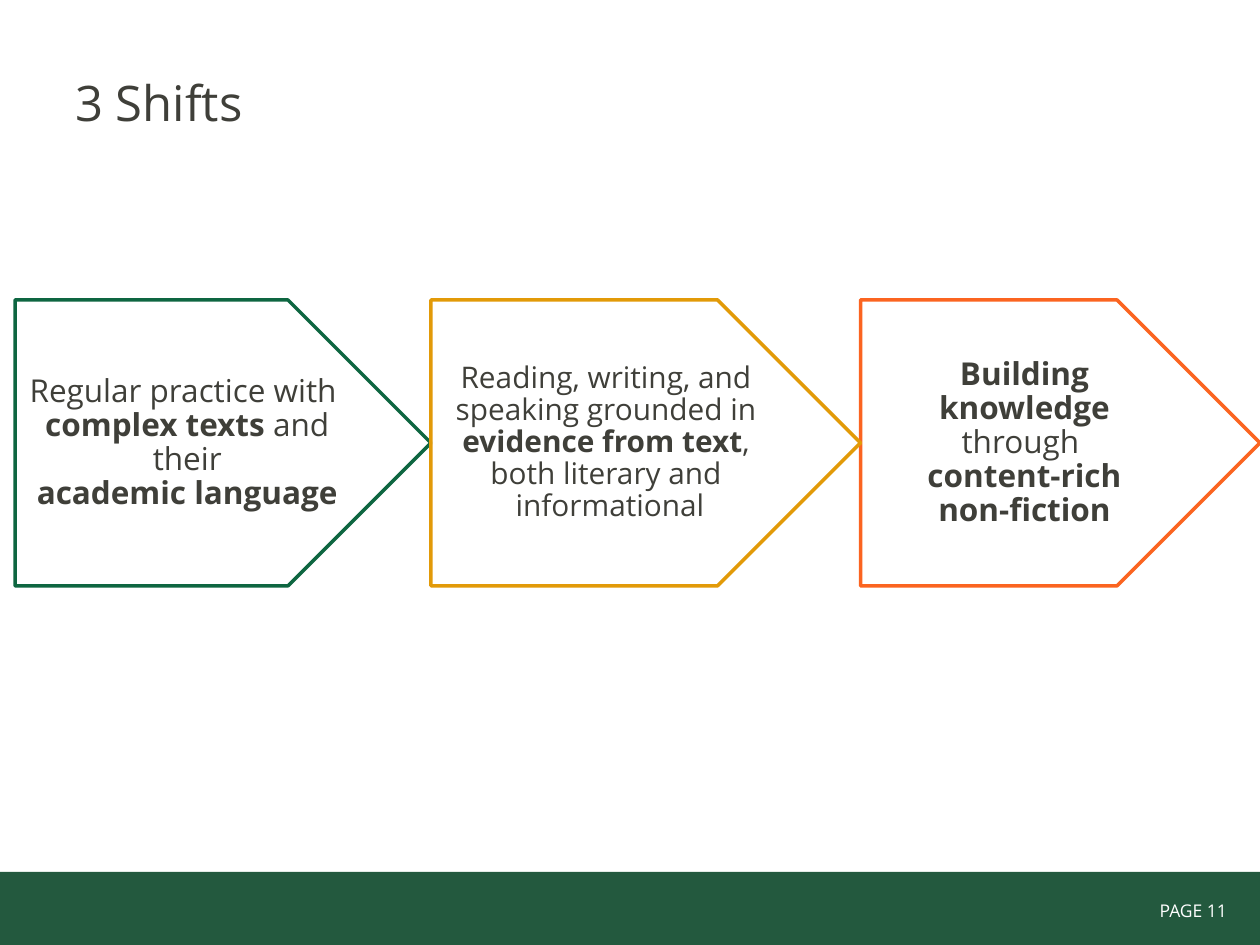
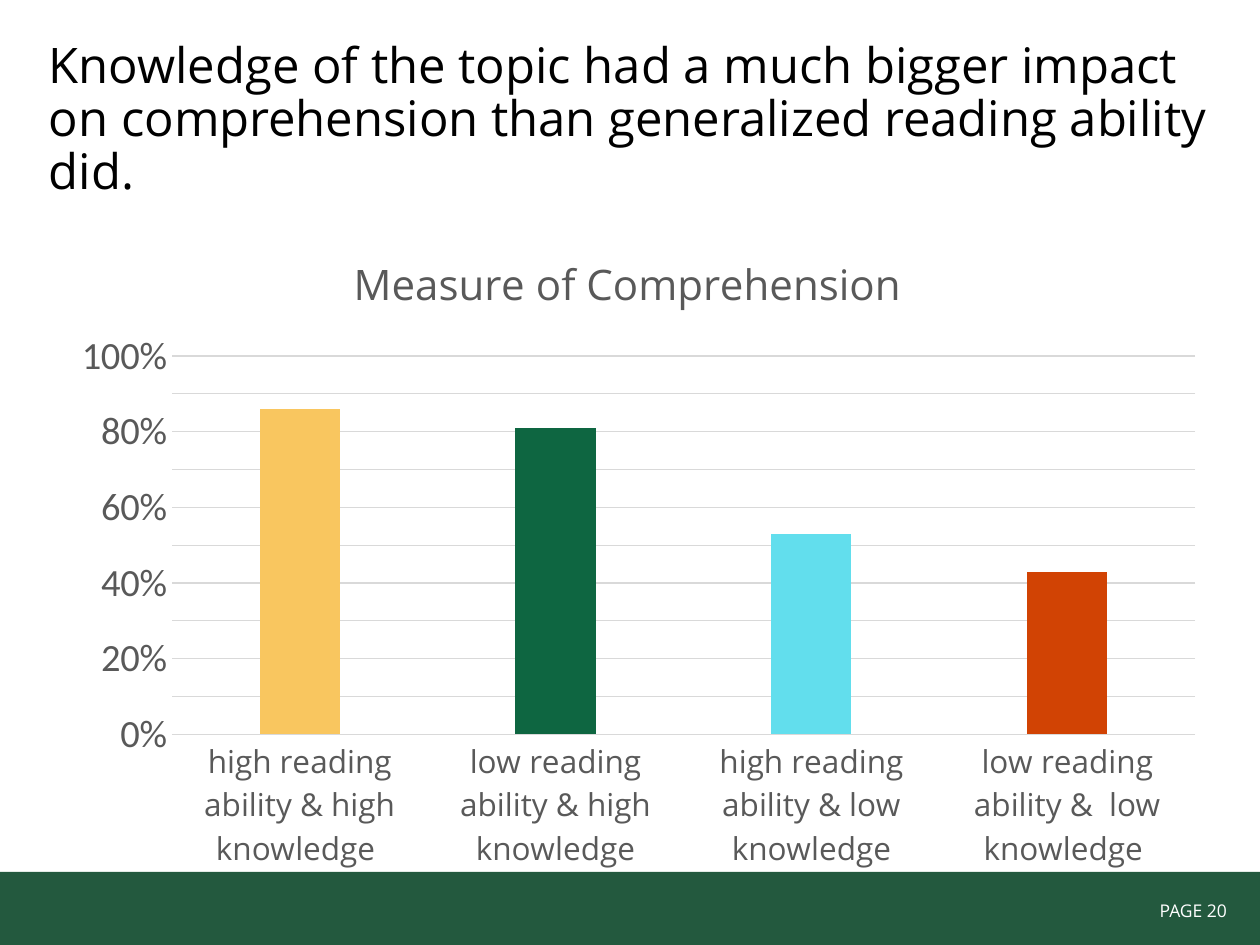
from lxml import etree
from pptx import Presentation
from pptx.chart.data import CategoryChartData
from pptx.dml.color import RGBColor
from pptx.enum.chart import XL_CHART_TYPE as ChartType, XL_TICK_MARK as TickMark
from pptx.enum.shapes import MSO_SHAPE as Shape
from pptx.enum.text import MSO_ANCHOR as Anchor, PP_ALIGN as Align
from pptx.oxml.ns import qn
from pptx.util import Pt

FONT = "Open Sans"
BAND, WHITE, BLACK = "23593E", "FFFFFF", "000000"
INK, GREY, GRID = "3F3F39", "595959", "D9D9D9"
GREEN, GOLD, ORANGE = "0E6641", "E29A08", "FB6420"
TITLE_SIZE = 28
TIGHT = 0.9

# left, width, colour, text size, paragraphs of (text, bold) spans
SHIFTS = [
    (8.64, 237.6, GREEN, 18, [
        [("Regular practice with ", False)],
        [("complex texts ", True), ("and their", False)],
        [("academic language", True)],
    ]),
    (491.76, 228.24, ORANGE, 18, [
        [("Building knowledge", True)],
        [("through ", False)],
        [("content-rich", True)],
        [("non-fiction", True)],
    ]),
    (246.24, 245.52, GOLD, 17, [
        [("Reading, writing, and ", False)],
        [("speaking grounded in ", False)],
        [("evidence from text", True), (", ", False)],
        [("both literary and ", False)],
        [("informational", False)],
    ]),
]

# category, share, bar colour
COMPREHENSION = [
    ("high reading ability & high knowledge ", 0.86, "F9C65F"),
    ("low reading ability & high knowledge", 0.81, GREEN),
    ("high reading ability & low knowledge", 0.53, "62DEED"),
    ("low reading ability &  low knowledge ", 0.43, "D14304"),
]


def rgb(value):
    return RGBColor.from_string(value)


def style_font(font, size, color, name=FONT, bold=False):
    font.name, font.size, font.bold = name, Pt(size), bold
    font.color.rgb = rgb(color)


def fill_text(frame, paragraphs, size, color, align=Align.LEFT,
              anchor=Anchor.TOP, spacing=None):
    """Write paragraphs, each a list of (text, bold) spans, into a frame."""
    frame.word_wrap = True
    frame.vertical_anchor = anchor
    for index, spans in enumerate(paragraphs):
        para = frame.add_paragraph() if index else frame.paragraphs[0]
        para.alignment = align
        if spacing:
            para.line_spacing = spacing
        for text, bold in spans:
            span = para.add_run()
            span.text = text
            style_font(span.font, size, color, bold=bold)


def add_text(page, box, text, size, color, **layout):
    frame = page.shapes.add_textbox(*map(Pt, box)).text_frame
    fill_text(frame, [[(text, False)]], size, color, **layout)


def add_title(page, box, text, color):
    add_text(page, box, text, TITLE_SIZE, color, anchor=Anchor.MIDDLE,
             spacing=TIGHT)


def add_page(deck, number):
    """Add a blank page with the footer band and its page number."""
    page = deck.slides.add_slide(deck.slide_layouts[6])
    band = page.shapes.add_shape(Shape.RECTANGLE, Pt(0), Pt(498.2), Pt(720.5), Pt(42.5))
    band.shadow.inherit = False
    band.fill.solid()
    band.fill.fore_color.rgb = rgb(BAND)
    band.line.fill.background()
    add_text(page, (596.2, 510.5, 114.5, 19.4), f"PAGE {number} ", 10, WHITE,
             align=Align.RIGHT)
    return page


def add_shift(page, box, color, size, paragraphs):
    arrow = page.shapes.add_shape(Shape.PENTAGON, *map(Pt, box))
    arrow.shadow.inherit = False
    arrow.adjustments[0] = 0.5
    arrow.fill.background()
    arrow.line.color.rgb = rgb(color)
    arrow.line.width = Pt(2)
    fill_text(arrow.text_frame, paragraphs, size, INK, Align.CENTER,
              Anchor.MIDDLE, TIGHT)


def place_chart_part(part, index, **fractions):
    """Give a chart title or plot area a manual layout."""
    layout = part.find(qn("c:layout"))
    if layout is None:
        layout = etree.Element(qn("c:layout"))
        part.insert(index, layout)
    manual = etree.SubElement(layout, qn("c:manualLayout"))
    if "w" in fractions:
        etree.SubElement(manual, qn("c:layoutTarget"), val="inner")
    for edge in "xy":
        etree.SubElement(manual, qn(f"c:{edge}Mode"), val="edge")
    for key, value in fractions.items():
        etree.SubElement(manual, qn(f"c:{key}"), val=str(value))


def clear_background(chart):
    props = etree.Element(qn("c:spPr"))
    etree.SubElement(props, qn("a:noFill"))
    etree.SubElement(etree.SubElement(props, qn("a:ln")), qn("a:noFill"))
    chart.font._element.getparent()
    chart._chartSpace.find(qn("c:chart")).addnext(props)


def style_axes(chart):
    for axis, size, name in ((chart.category_axis, 18, FONT),
                             (chart.value_axis, 22, "Calibri")):
        axis.major_tick_mark = axis.minor_tick_mark = TickMark.NONE
        style_font(axis.tick_labels.font, size, GREY, name)
    shares = chart.value_axis
    shares.minimum_scale, shares.maximum_scale, shares.major_unit = 0, 1, 0.1
    shares.tick_labels.number_format = "0%"
    shares.tick_labels.number_format_is_linked = False
    shares.format.line.fill.background()
    shares.has_major_gridlines = True
    for line in (chart.category_axis.format.line, shares.major_gridlines.format.line):
        line.color.rgb = rgb(GRID)
        line.width = Pt(0.75)


def add_comprehension_chart(page, box):
    names, values, colors = zip(*COMPREHENSION)
    data = CategoryChartData(number_format="0%")
    data.categories = names
    data.add_series("Series 1", values)
    chart = page.shapes.add_chart(ChartType.COLUMN_CLUSTERED, *map(Pt, box), data).chart
    style_font(chart.font, 10, BLACK, "Calibri")
    clear_background(chart)
    chart.has_legend = False
    chart.has_title = True
    span = chart.chart_title.text_frame.paragraphs[0].add_run()
    span.text = "Measure of Comprehension"
    style_font(span.font, 24, GREY)
    style_axes(chart)

    plot = chart.plots[0]
    plot.gap_width, plot.overlap, plot.vary_by_categories = 219, -27, False
    bars = plot.series[0]
    bars.format.fill.solid()
    bars.format.fill.fore_color.rgb = rgb(GREEN)
    for index, color in enumerate(colors):
        fill = bars.points[index].format.fill
        fill.solid()
        fill.fore_color.rgb = rgb(color)

    place_chart_part(chart.chart_title._element, 1, x=0.25, y=0.04)
    plot_area = chart._chartSpace.find(".//" + qn("c:plotArea"))
    place_chart_part(plot_area, 0, x=0.1, y=0.21, w=0.88, h=0.57)


def build_shifts_page(deck):
    page = add_page(deck, 11)
    for left, width, *content in SHIFTS:
        add_shift(page, (left, 171.4, width, 163.4), *content)
    add_title(page, (36, 15.1, 648, 90), "3 Shifts", INK)


def build_knowledge_page(deck):
    page = add_page(deck, 20)
    add_comprehension_chart(page, (31.7, 123.8, 664.6, 379.4))
    add_title(page, (20.9, 14.4, 678.2, 108.7),
              "Knowledge of the topic had a much bigger impact on comprehension "
              "than generalized reading ability did.", BLACK)


def main():
    deck = Presentation()
    deck.slide_width, deck.slide_height = Pt(720), Pt(540)
    build_shifts_page(deck)
    build_knowledge_page(deck)
    deck.save("out.pptx")


if __name__ == "__main__":
    main()
